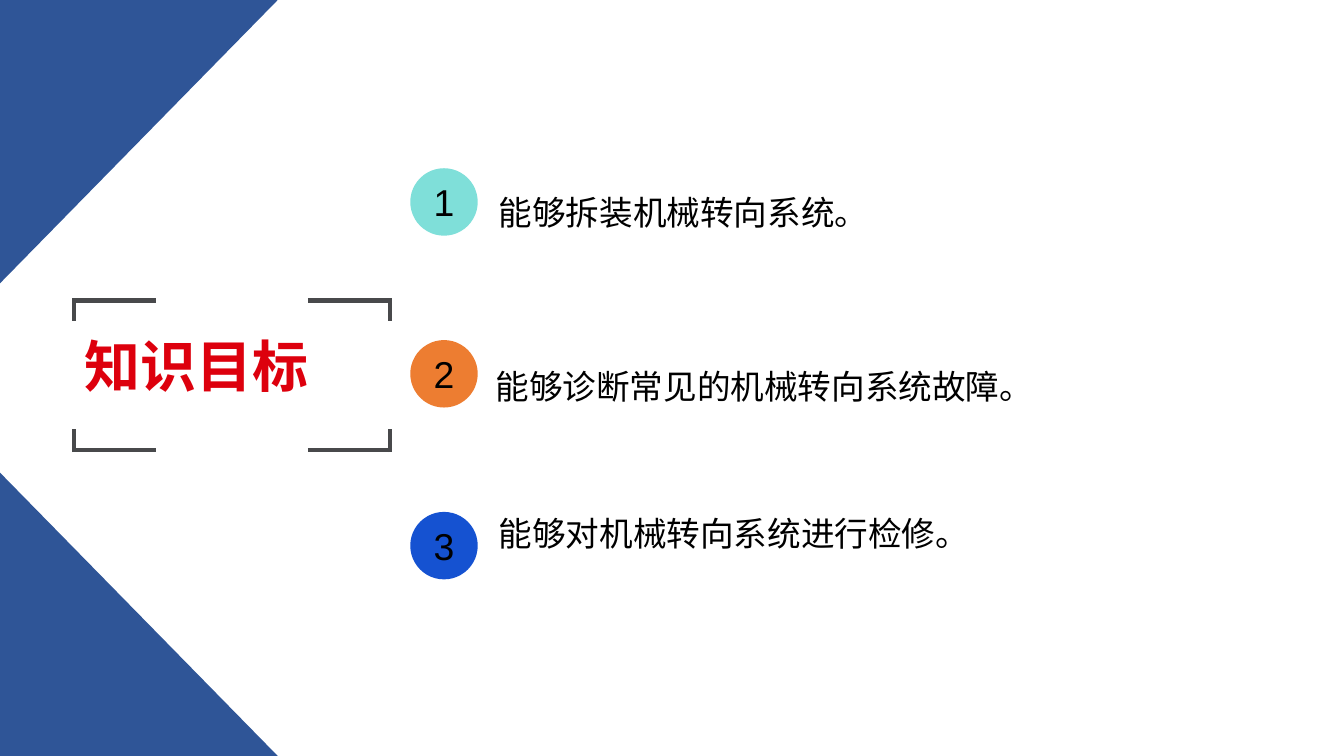
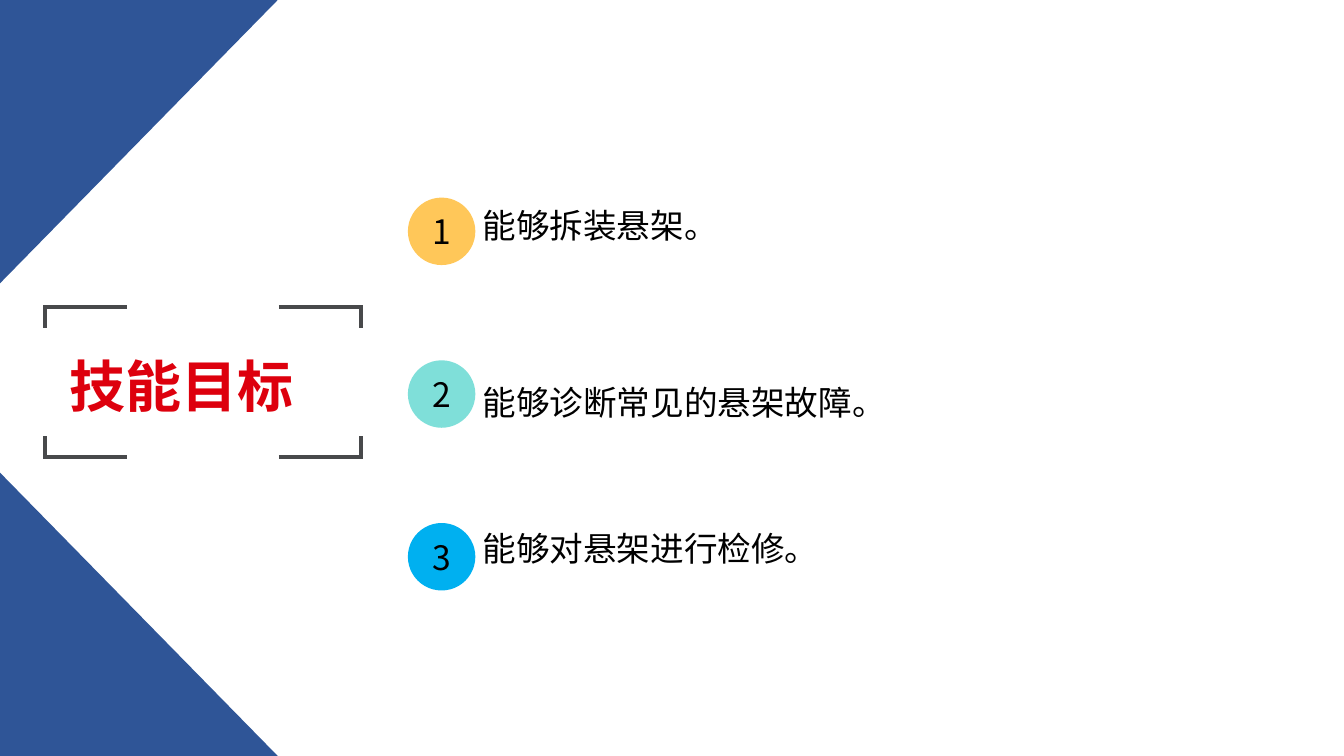
"""Build two slides of learning goals with a shared corner-framed title design."""
import dataclasses

import lxml.etree
import pptx
import pptx.dml.color
import pptx.enum.shapes
import pptx.enum.text
import pptx.oxml.ns
import pptx.util

Cm = pptx.util.Cm
Pt = pptx.util.Pt
RGB = pptx.dml.color.RGBColor.from_string
SHAPE = pptx.enum.shapes.MSO_SHAPE
ALIGN = pptx.enum.text.PP_ALIGN
ANCHOR = pptx.enum.text.MSO_ANCHOR
qn = pptx.oxml.ns.qn


@dataclasses.dataclass(frozen=True)
class Theme:
    band: str = "2F5597"
    title: str = "DD000D"
    frame: str = "48494B"
    ink: str = "000000"
    aqua: str = "7FDFD9"
    orange: str = "ED7D31"
    blue: str = "1552D1"
    amber: str = "FFC759"
    sky: str = "00B0F0"
    latin: str = "Times New Roman"
    cjk: str = "Noto Sans CJK SC"
    title_size: float = 40
    body_size: float = 24
    frame_width: float = 3


theme = Theme()


def write(sp, text, size=theme.body_size, font=theme.latin, color=theme.ink, bold=False,
          align=ALIGN.LEFT, anchor=ANCHOR.TOP, spacing=None):
    tf = sp.text_frame
    tf.word_wrap = True
    tf.vertical_anchor = anchor
    p = tf.paragraphs[0]
    p.alignment = align
    p.line_spacing = spacing
    r = p.add_run()
    r.text = text
    r.font.size = Pt(size)
    r.font.name = font
    r.font.bold = bold
    r.font.color.rgb = RGB(color)
    ea = lxml.etree.SubElement(r.font._element, qn("a:ea"))
    ea.set("typeface", theme.cjk)


def add_filled(s, kind, x, y, w, h, color):
    sp = s.shapes.add_shape(kind, Cm(x), Cm(y), Cm(w), Cm(h))
    sp.shadow.inherit = False
    sp.fill.solid()
    sp.fill.fore_color.rgb = RGB(color)
    sp.line.fill.background()
    return sp


slide_w, slide_h = 33.87, 19.05
band_w, band_h = 7.0, 7.14
frame_w, frame_h, arm, leg, overlap = 7.95, 3.77, 2.06, 0.53, 0.05
badge = 1.7

slides = [
    dict(title="知识目标", title_at=(1.88, 8.23), frame_at=(1.87, 7.57),
         badge_at=(10.34, 4.24), pitch=4.33, badge_font="Arial", badge_size=26.7,
         goals=[("能够拆装机械转向系统。", theme.aqua, 12.32, 4.7, 19.58, None),
                ("能够诊断常见的机械转向系统故障。", theme.orange, 12.24, 9.09, 20.68, None),
                ("能够对机械转向系统进行检修。", theme.blue, 12.32, 12.8, 20.68, None)]),
    dict(title="技能目标", title_at=(1.5, 8.74), frame_at=(1.14, 7.74),
         badge_at=(10.28, 4.98), pitch=4.1, badge_font=theme.cjk, badge_size=24,
         goals=[("能够拆装悬架。", theme.amber, 11.91, 5.03, 15.98, None),
                ("能够诊断常见的悬架故障。", theme.aqua, 11.91, 8.99, 14.94, 1.5),
                ("能够对悬架进行检修。", theme.sky, 11.91, 13.18, 19.91, None)]),
]

prs = pptx.Presentation()
prs.slide_width, prs.slide_height = Cm(slide_w), Cm(slide_h)

for spec_row in slides:
    s = prs.slides.add_slide(prs.slide_layouts[6])

    offset = (band_w - band_h) / 2
    sp = add_filled(s, SHAPE.RIGHT_TRIANGLE, offset, -offset, band_h, band_w, theme.band)
    sp.rotation = 90
    add_filled(s, SHAPE.RIGHT_TRIANGLE, 0, slide_h - band_h, band_w, band_h, theme.band)

    x, y = spec_row["title_at"]
    sp = s.shapes.add_textbox(Cm(x), Cm(y), Cm(7.59), Cm(1.96))
    write(sp, spec_row["title"], size=theme.title_size, color=theme.title, bold=True,
          align=ALIGN.JUSTIFY)

    left, top = spec_row["frame_at"]
    for y, down in ((top, 1), (top + frame_h, -1)):
        corners = s.shapes.add_group_shape()
        for x, inward in ((left, 1), (left + frame_w, -1)):
            for x1, y1, x2, y2 in ((x, y - down * overlap, x, y + down * leg),
                                   (x + inward * arm, y, x, y)):
                line = corners.shapes.add_connector(
                    pptx.enum.shapes.MSO_CONNECTOR.STRAIGHT, Cm(x1), Cm(y1), Cm(x2), Cm(y2))
                line.line.color.rgb = RGB(theme.frame)
                line.line.width = Pt(theme.frame_width)
                lxml.etree.SubElement(line._element.spPr, qn("a:effectLst"))

    badge_x, badge_y = spec_row["badge_at"]
    for i, (text, color, x, y, w, spacing) in enumerate(spec_row["goals"]):
        sp = add_filled(s, SHAPE.OVAL, badge_x, badge_y + i * spec_row["pitch"],
                        badge, badge, color)
        tf = sp.text_frame
        tf.margin_left = tf.margin_right = tf.margin_top = tf.margin_bottom = 0
        write(sp, str(i + 1), size=spec_row["badge_size"], font=spec_row["badge_font"],
              align=ALIGN.CENTER, anchor=ANCHOR.MIDDLE)
        sp = s.shapes.add_textbox(Cm(x), Cm(y), Cm(w), Cm(1.37))
        write(sp, text, spacing=spacing)

prs.save("out.pptx")
